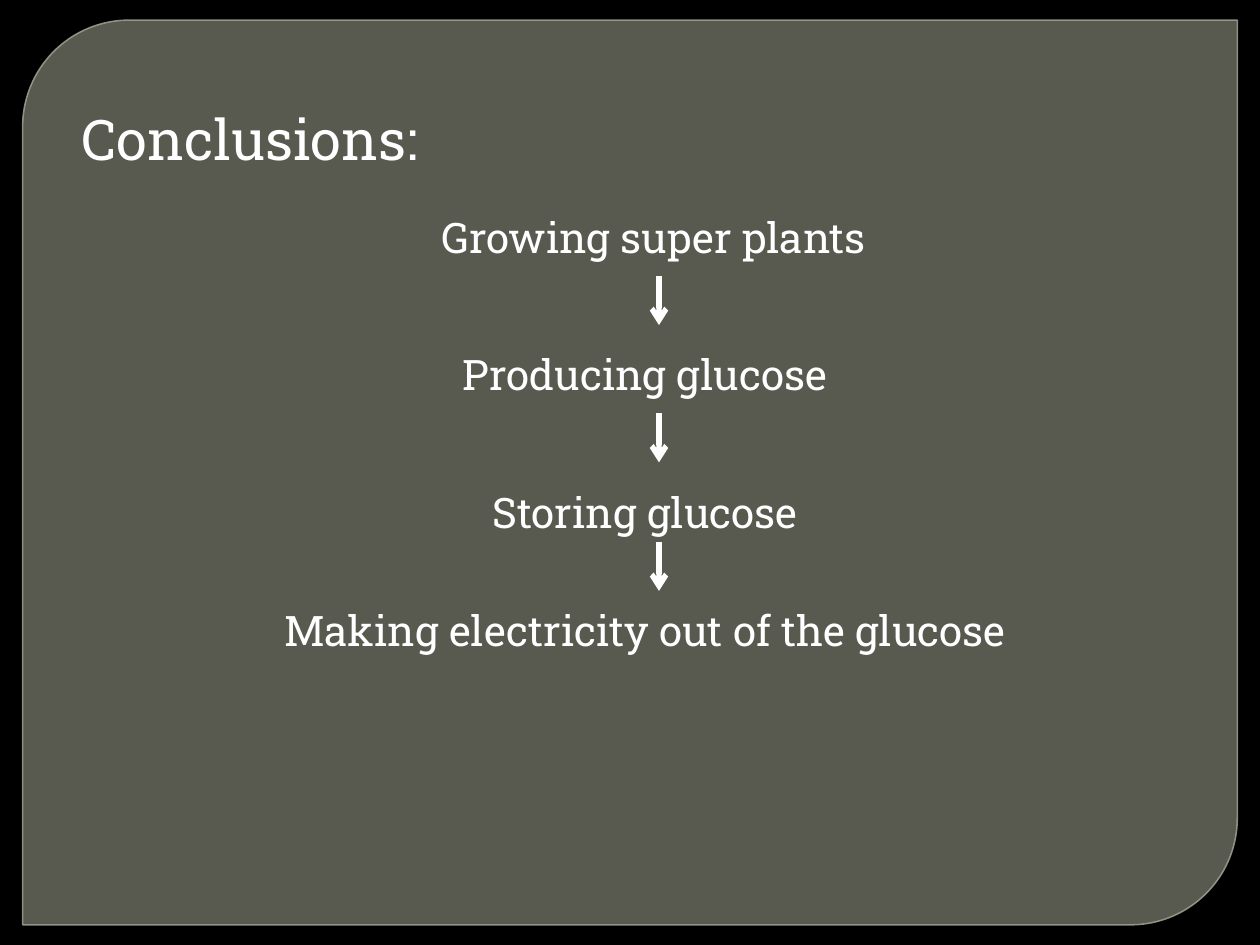
from dataclasses import dataclass

from lxml import etree
from pptx import Presentation
from pptx.dml.color import RGBColor
from pptx.enum.shapes import MSO_CONNECTOR, MSO_SHAPE
from pptx.enum.text import PP_ALIGN
from pptx.oxml.ns import qn
from pptx.util import Inches, Pt

LEFT, CENTER = PP_ALIGN.LEFT, PP_ALIGN.CENTER
PANEL = MSO_SHAPE.ROUND_2_DIAG_RECTANGLE
STRAIGHT = MSO_CONNECTOR.STRAIGHT
COLS, ROWS = 100, 75
UNIT = Inches(0.1)


@dataclass(frozen=True)
class Theme:
    """Colours, font and sizes of the slide."""
    background: str = "000000"
    panel: str = "888B7B"
    panel_alpha: int = 65
    border: str = "9DA090"
    border_alpha: int = 88
    border_width: float = 0.87
    ink: str = "FFFFFF"
    font: str = "Roboto Slab"
    title_size: int = 32
    step_size: int = 24
    arrow_width: int = 3


THEME = Theme()


def grid(*cells):
    """Turn grid columns and rows into slide lengths."""
    return [round(c * UNIT) for c in cells]


def paint(fill, color, alpha=100):
    """Give a fill a solid colour with an opacity in percent."""
    fill.solid()
    fill.fore_color.rgb = RGBColor.from_string(color)
    if alpha < 100:
        clr = fill._xPr.find(qn("a:solidFill"))[0]
        etree.SubElement(clr, qn("a:alpha"), val=str(alpha * 1000))


def add_panel(s, x, y, w, h):
    """Add the translucent panel with two rounded corners."""
    sp = s.shapes.add_shape(PANEL, *grid(x, y, w, h))
    sp.shadow.inherit = False
    sp.adjustments[0] = 0.118
    sp.adjustments[1] = 0
    paint(sp.fill, THEME.panel, THEME.panel_alpha)
    sp.line.width = Pt(THEME.border_width)
    paint(sp.line.fill, THEME.border, THEME.border_alpha)


def add_text(s, text, x, y, w, h, *, size, align=LEFT):
    """Add a wrapped one-paragraph text box."""
    tf = s.shapes.add_textbox(*grid(x, y, w, h)).text_frame
    tf.word_wrap = True
    p = tf.paragraphs[0]
    p.alignment = align
    r = p.add_run()
    r.text = text
    r.font.name = THEME.font
    r.font.size = Pt(size)
    r.font.color.rgb = RGBColor.from_string(THEME.ink)


def add_down_arrow(s, x, y, length):
    """Add a vertical arrow pointing down."""
    cxn = s.shapes.add_connector(STRAIGHT, *grid(x, y, x, y + length))
    cxn.line.width = Pt(THEME.arrow_width)
    paint(cxn.line.fill, THEME.ink)
    etree.SubElement(cxn.line._get_or_add_ln(), qn("a:tailEnd"), type="arrow")
    etree.SubElement(cxn._element.spPr, qn("a:effectLst"))


def main():
    """Build and save the conclusions slide."""
    prs = Presentation()
    prs.slide_width, prs.slide_height = grid(COLS, ROWS)
    s = prs.slides.add_slide(prs.slide_layouts[6])
    paint(s.background.fill, THEME.background)

    add_panel(s, 1.8, 1.6, 96.4, 71.8)
    add_text(s, "Conclusions:", 5.5, 7.8, 84.4, 6.4, size=THEME.title_size)

    steps = [
        ("Growing super plants", 10.9, 16.3),
        ("Producing glucose", 10.2, 27.2),
        ("Storing glucose", 10.2, 38.1),
        ("Making electricity out of the glucose", 10.2, 47.5),
    ]
    for text, x, y in steps:
        add_text(s, text, x, y, 82, 5, size=THEME.step_size, align=CENTER)
    for y in (21.9, 32.8, 43):
        add_down_arrow(s, 52.3, y, 3.9)

    prs.save("out.pptx")


if __name__ == "__main__":
    main()
